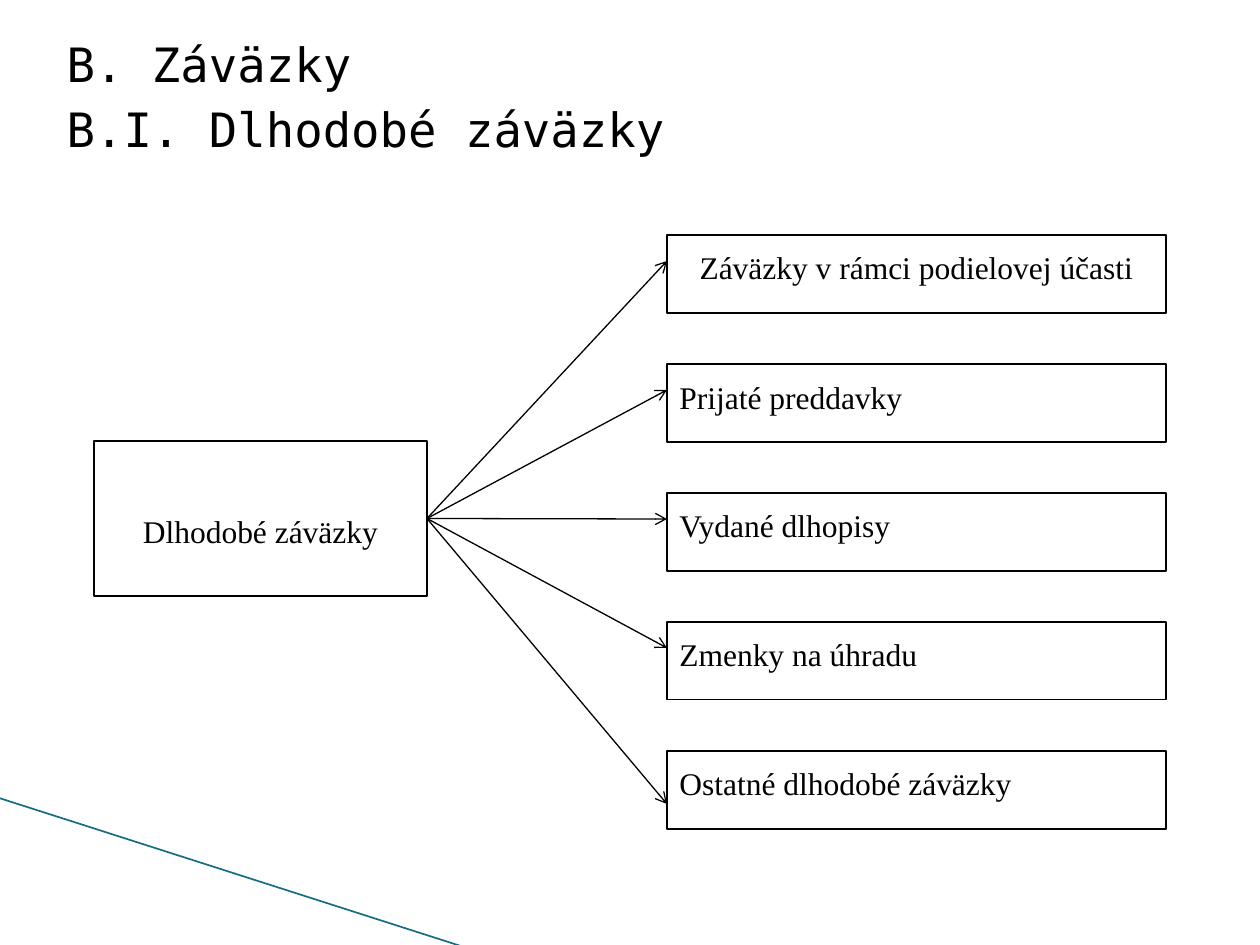
from lxml import etree
from pptx import Presentation
from pptx import util as u
from pptx.dml.color import RGBColor
from pptx.enum import shapes, text
from pptx.oxml import ns

PX = 914400 // 126


def color(value):
    return RGBColor.from_string(value)


def add_line(x1, y1, x2, y2, value, width):
    c = s.shapes.add_connector(shapes.MSO_CONNECTOR.STRAIGHT, x1 * PX, y1 * PX, x2 * PX, y2 * PX)
    c.line.color.rgb = color(value)
    c.line.width = u.Pt(width)
    etree.SubElement(c._element.spPr, ns.qn("a:effectLst"))
    return c


prs = Presentation()
prs.slide_width = u.Inches(10)
prs.slide_height = u.Inches(7.5)
s = prs.slides.add_slide(prs.slide_layouts[1])
s.background.fill.solid()
s.background.fill.fore_color.rgb = color("FFFFFF")
title = s.shapes.title._element
title.getparent().remove(title)

add_line(-1, 798, 467, 948, "156D83", 0.95)

body = s.placeholders[1]
body.left, body.top, body.width, body.height = 54 * PX, 26 * PX, 1134 * PX, 624 * PX
tf = body.text_frame
tf.auto_size = text.MSO_AUTO_SIZE.NONE
tf.margin_top = 9 * PX
for i, heading in enumerate(["B. Záväzky", "B.I. Dlhodobé záväzky"]):
    p = tf.add_paragraph() if i else tf.paragraphs[0]
    pPr = p._p.get_or_add_pPr()
    pPr.set("marL", "0")
    pPr.set("indent", "0")
    etree.SubElement(pPr, ns.qn("a:buNone"))
    p.space_before = u.Pt(5 * i)
    r = p.add_run()
    r.text = heading
    r.font.name = "DejaVu Sans Mono"
    r.font.size = u.Pt(27)
    r.font.color.rgb = color("000000")

left, center = text.PP_ALIGN.LEFT, text.PP_ALIGN.CENTER
items = [
    ("Záväzky v rámci podielovej účasti", center, 26),
    ("Prijaté preddavky", left, 26),
    ("Vydané dlhopisy", left, 26),
    ("Zmenky na úhradu", left, 26),
    ("Ostatné dlhodobé záväzky", left, 53),
]
boxes = [("Dlhodobé záväzky", center, 94, 441, 333, 155, 63)]
for i, (label, align, tip) in enumerate(items):
    boxes.append((label, align, 667, 235 + 129 * i, 499, 78, 6))

rects = []
for label, align, x, y, w, h, inset in boxes:
    sp = s.shapes.add_shape(shapes.MSO_SHAPE.RECTANGLE, x * PX, y * PX, w * PX, h * PX)
    sp.shadow.inherit = False
    sp.fill.solid()
    sp.fill.fore_color.rgb = color("FFFFFF")
    sp.line.color.rgb = color("000000")
    sp.line.width = u.Pt(0.75)
    tf = sp.text_frame
    tf.word_wrap = True
    tf.vertical_anchor = text.MSO_ANCHOR.TOP
    tf.margin_top = inset * PX
    p = tf.paragraphs[0]
    p.alignment = align
    p.line_spacing = 1.2
    r = p.add_run()
    r.text = label
    r.font.name = "Times New Roman"
    r.font.size = u.Pt(18)
    r.font.color.rgb = color("000000")
    rects.append(sp)

for i, (label, align, tip) in enumerate(items):
    c = add_line(427, 519, 667, 235 + 129 * i + tip, "000000", 0.75)
    c.begin_connect(rects[0], 3)
    etree.SubElement(c.line._get_or_add_ln(), ns.qn("a:tailEnd"), type="arrow")

prs.save("out.pptx")
